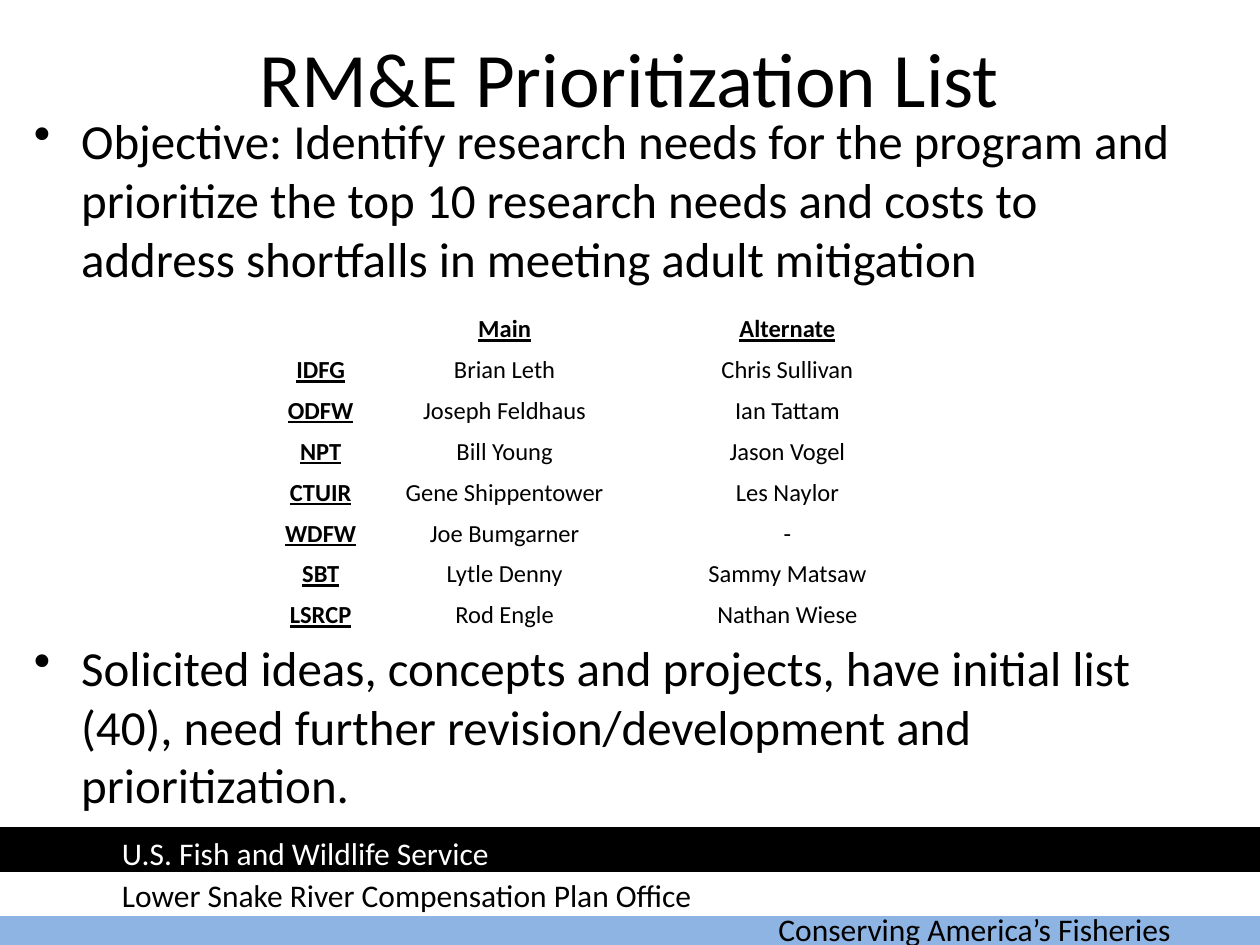
"""Build the RM&E prioritization list slide."""
import pptx
import pptx.dml.color
import pptx.enum.shapes
import pptx.enum.text
import pptx.oxml
import pptx.oxml.ns
import pptx.util

Pt = pptx.util.Pt
ALIGN = pptx.enum.text.PP_ALIGN
ANCHOR = pptx.enum.text.MSO_ANCHOR
BLACK = pptx.dml.color.RGBColor(0x00, 0x00, 0x00)
WHITE = pptx.dml.color.RGBColor(0xFF, 0xFF, 0xFF)
BLUE = pptx.dml.color.RGBColor(0x8E, 0xB4, 0xE3)

WIDTH, HEIGHT = 720, 540
BANDS = [(-0.72, 516.24, BLUE), (0, 498.96, WHITE), (0, 473.76, BLACK)]
BAND_HEIGHT = 23.76
FOOTERS = [
    ("Conserving America’s Fisheries", 437.76, 516.24, 264.24, BLACK),
    ("U.S. Fish and Wildlife Service", 62.64, 473.04, 299.52, WHITE),
    ("Lower Snake River Compensation Plan Office", 62.64, 496.8, 357.84, BLACK),
]
OBJECTIVE = ("Objective: Identify research needs for the program and prioritize the top 10 "
             "research needs and costs to address shortfalls in meeting adult mitigation")
STATUS = ("Solicited ideas, concepts and projects, have initial list (40), "
          "need further revision/development and prioritization.")
CONTACTS = [
    ("", "Main", "Alternate"),
    ("IDFG", "Brian Leth", "Chris Sullivan"),
    ("ODFW", "Joseph Feldhaus", "Ian Tattam"),
    ("NPT", "Bill Young", "Jason Vogel"),
    ("CTUIR", "Gene Shippentower", "Les Naylor"),
    ("WDFW", "Joe Bumgarner", "-"),
    ("SBT", "Lytle Denny", "Sammy Matsaw"),
    ("LSRCP", "Rod Engle", "Nathan Wiese"),
]
COLUMN_WIDTHS = [78.5, 131.75, 191.5]
ROW_HEIGHT = 23.33


def write(paragraph, text, font="Calibri", size=18, color=BLACK, align=ALIGN.LEFT,
          heading=False, bullet=False, before=0):
    if bullet:
        properties = paragraph._p.get_or_add_pPr()
        properties.set("marL", str(Pt(27)))
        properties.set("indent", str(-Pt(27)))
        mark = pptx.oxml.parse_xml(
            f'<a:buChar {pptx.oxml.ns.nsdecls("a")} char="•"/>')
        properties.append(mark)
    paragraph.alignment = align
    if before:
        paragraph.space_before = Pt(before)
    run = paragraph.add_run()
    run.text = text
    run.font.name = font
    run.font.size = Pt(size)
    run.font.color.rgb = color
    run.font.bold = heading
    run.font.underline = heading


class SlideBuilder:
    def __init__(self, slide, font="Calibri"):
        self.slide = slide
        self.font = font

    def band(self, left, top, color):
        band = self.slide.shapes.add_shape(
            pptx.enum.shapes.MSO_SHAPE.RECTANGLE,
            Pt(left), Pt(top), Pt(WIDTH), Pt(BAND_HEIGHT))
        band.shadow.inherit = False
        band.fill.solid()
        band.fill.fore_color.rgb = color
        band.line.color.rgb = color
        band.line.width = Pt(2)

    def text(self, entries, left, top, width, height, anchor=ANCHOR.TOP, gap=0, **style):
        frame = self.slide.shapes.add_textbox(
            Pt(left), Pt(top), Pt(width), Pt(height)).text_frame
        frame.word_wrap = True
        frame.vertical_anchor = anchor
        for index, entry in enumerate(entries):
            paragraph = frame.add_paragraph() if index else frame.paragraphs[0]
            write(paragraph, entry, font=self.font, before=gap if index else 0, **style)

    def table(self, rows, left, top, widths, row_height):
        table = self.slide.shapes.add_table(
            len(rows), len(widths), Pt(left), Pt(top),
            Pt(sum(widths)), Pt(row_height * len(rows))).table
        table.first_row = False
        table.horz_banding = False
        for column, width in zip(table.columns, widths):
            column.width = Pt(width)
        for row_index, row in enumerate(rows):
            table.rows[row_index].height = Pt(row_height)
            for column_index, value in enumerate(row):
                cell = table.cell(row_index, column_index)
                cell.fill.background()
                cell.vertical_anchor = ANCHOR.BOTTOM
                cell.margin_left = cell.margin_right = cell.margin_top = Pt(0.72)
                cell.margin_bottom = 0
                if value:
                    write(cell.text_frame.paragraphs[0], value, font=self.font, size=14,
                          align=ALIGN.CENTER, heading=row_index == 0 or column_index == 0)


def main():
    presentation = pptx.Presentation()
    presentation.slide_width = Pt(WIDTH)
    presentation.slide_height = Pt(HEIGHT)
    builder = SlideBuilder(presentation.slides.add_slide(presentation.slide_layouts[6]))

    for left, top, color in BANDS:
        builder.band(left, top, color)
    for footer, left, top, width, color in FOOTERS:
        builder.text([footer], left, top, width, 28.8, color=color)
    builder.text(["RM&E Prioritization List"], 36, 12.24, 648, 62.64,
                 anchor=ANCHOR.MIDDLE, size=44, align=ALIGN.CENTER)
    builder.text([OBJECTIVE, STATUS], 12.24, 59.76, 680.4, 414,
                 gap=200, size=28, bullet=True)
    builder.table(CONTACTS, 144, 173.5, COLUMN_WIDTHS, ROW_HEIGHT)
    presentation.save("out.pptx")


if __name__ == "__main__":
    main()
